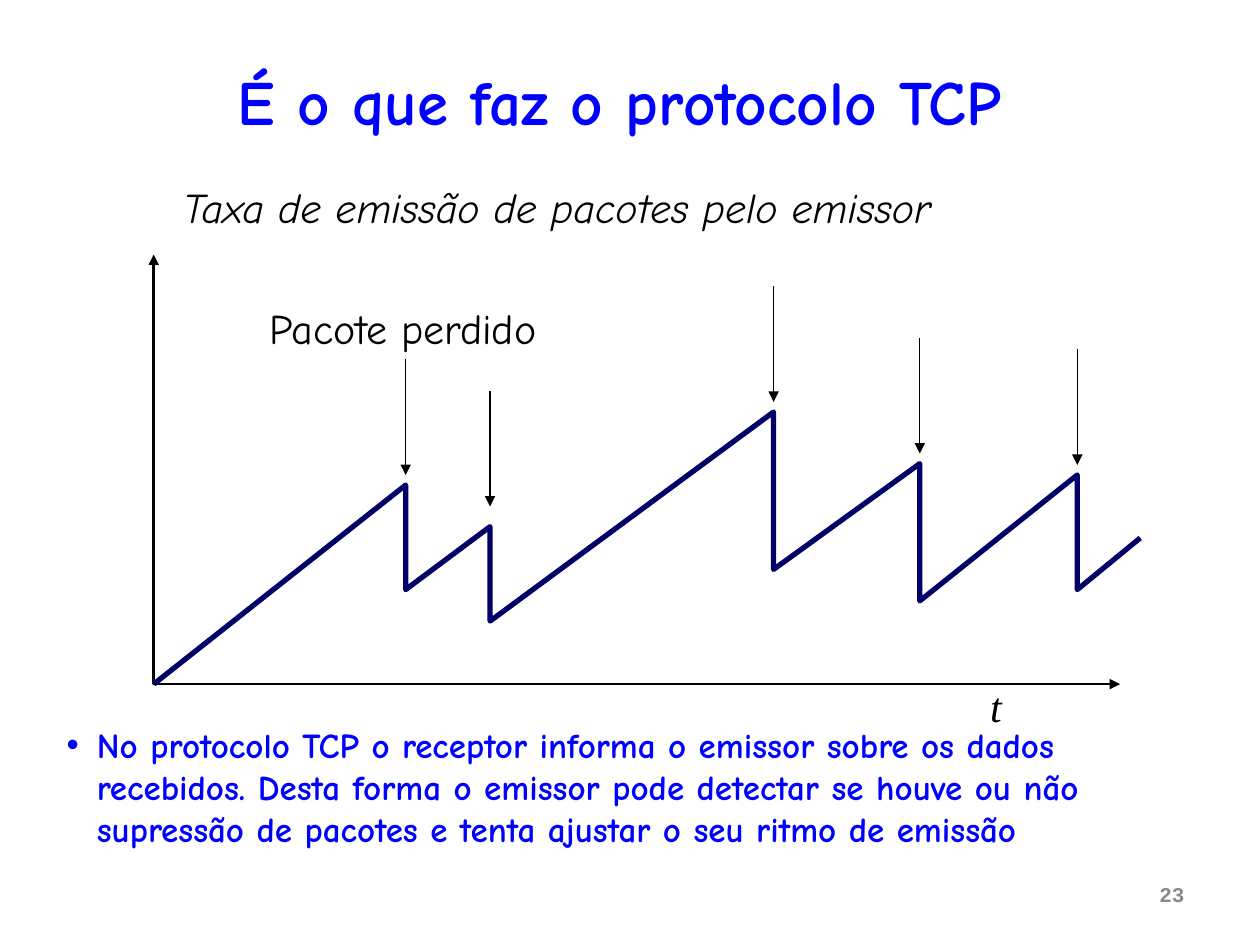
from pptx import Presentation
from pptx.dml.color import RGBColor
from pptx.enum.shapes import MSO_CONNECTOR as Link
from pptx.enum.text import MSO_ANCHOR as Anchor, MSO_AUTO_SIZE as Auto, PP_ALIGN as Align
from pptx.oxml.ns import qn
from pptx.util import Inches, Pt
from lxml.etree import SubElement

BLUE = RGBColor(0x00, 0x00, 0xFF)
NAVY = RGBColor(0x00, 0x00, 0x66)
BLACK = RGBColor(0x00, 0x00, 0x00)
GRAY = RGBColor(0x89, 0x89, 0x89)
COMIC = "Comic Neue"

LEFT, BASE = 1.22, 5.43
LOSSES = [
    (3.22, 3.85, 4.68, 2.85),
    (3.89, 4.18, 4.93, 3.10),
    (6.14, 3.27, 4.52, 2.27),
    (7.30, 3.68, 4.77, 2.68),
    (8.55, 3.77, 4.68, 2.77),
]


def place(shape, box):
    """Set the position and size of a shape."""
    shape.left, shape.top, shape.width, shape.height = map(Inches, box)


def write(frame, text, size, color, font=COMIC, align=Align.LEFT, bold=False, italic=False):
    """Write one formatted run in the first paragraph and return the paragraph."""
    para = frame.paragraphs[0]
    para.alignment = align
    run = para.add_run()
    run.text = text
    face = run.font
    face.name, face.size, face.bold, face.italic = font, Pt(size), bold, italic
    face.color.rgb = color
    return para


def add_text(slide, box, text, size, color, wrap=True, **style):
    """Add a text box and return its paragraph."""
    frame = slide.shapes.add_textbox(*map(Inches, box)).text_frame
    frame.word_wrap = wrap
    if not wrap:
        frame.auto_size = Auto.SHAPE_TO_FIT_TEXT
    return write(frame, text, size, color, **style)


def add_label(slide, box, text, **style):
    """Add a centred one-line chart label."""
    add_text(slide, box, text, 24, BLACK, wrap=False, align=Align.CENTER, **style)


def add_bullet(para, indent):
    """Give a paragraph a hanging round bullet."""
    props = para._p.get_or_add_pPr()
    props.set("marL", str(Inches(indent)))
    props.set("indent", str(-Inches(indent)))
    SubElement(props, qn("a:buFont"), typeface="Arial")
    SubElement(props, qn("a:buChar"), char="•")


def ink(shape, color, width, *ends):
    """Set the line of a shape and its arrowheads."""
    shape.line.color.rgb = color
    shape.line.width = Pt(width)
    line = shape._element.spPr.find(qn("a:ln"))
    for end in ends:
        SubElement(line, qn(f"a:{end}"), type="triangle")


def add_path(slide, points, color, width, *ends):
    """Draw an open, unfilled polyline."""
    start, *rest = [(Inches(x), Inches(y)) for x, y in points]
    pen = slide.shapes.build_freeform(*start)
    pen.add_line_segments(rest, close=False)
    shape = pen.convert_to_shape()
    shape.fill.background()
    ink(shape, color, width, *ends)
    shape.shadow.inherit = False


def add_arrow(slide, x, top):
    """Draw a downward arrow that marks a lost packet."""
    arrow = slide.shapes.add_connector(Link.STRAIGHT, *map(Inches, (x, top, x, top + 0.92)))
    ink(arrow, BLACK, 0.75, "tailEnd")
    SubElement(arrow._element.spPr, qn("a:effectLst"))


def add_title(slide, text):
    """Fill and move the title placeholder."""
    title = slide.shapes.title
    place(title, (0.33, 0.42, 9.17, 0.75))
    title.text_frame.vertical_anchor = Anchor.MIDDLE
    write(title.text_frame, text, 36, BLUE, align=Align.CENTER, bold=True)


def add_graph(slide):
    """Draw the axes, the sawtooth rate and the loss arrows."""
    axes = [(LEFT, 2.02), (LEFT, BASE), (8.89, BASE)]
    add_path(slide, axes, BLACK, 1.5, "headEnd", "tailEnd")
    teeth = [(x, y) for x, peak, low, _ in LOSSES for y in (peak, low)]
    add_path(slide, [(LEFT, BASE), *teeth, (9.05, 4.27)], NAVY, 3)
    add_label(slide, (7.76, 5.35, 0.29, 0.5), "t", font="Times New Roman", italic=True)
    add_label(slide, (1.06, 1.39, 6.72, 0.5), "Taxa de emissão de pacotes pelo emissor", italic=True)
    for x, _, _, top in LOSSES:
        add_arrow(slide, x, top)
    add_label(slide, (1.93, 2.35, 2.54, 0.5), "Pacote perdido")


def main():
    """Build the slide and save it."""
    deck = Presentation()
    deck.slide_width, deck.slide_height = Inches(10), Inches(7.5)
    slide = deck.slides.add_slide(deck.slide_layouts[5])
    add_title(slide, "É o que faz o protocolo TCP")
    add_text(slide, (7.17, 6.95, 2.33, 0.4), "23", 12, GRAY,
             font="Courier New", align=Align.RIGHT, bold=True)
    add_graph(slide)
    note = add_text(
        slide, (0.43, 5.69, 9.29, 1.45),
        "No protocolo TCP o receptor informa o emissor sobre os dados recebidos. "
        "Desta forma o emissor pode detectar se houve ou não supressão de pacotes "
        "e tenta ajustar o seu ritmo de emissão", 20, BLUE, bold=True)
    add_bullet(note, 0.24)
    deck.save("out.pptx")


if __name__ == "__main__":
    main()
